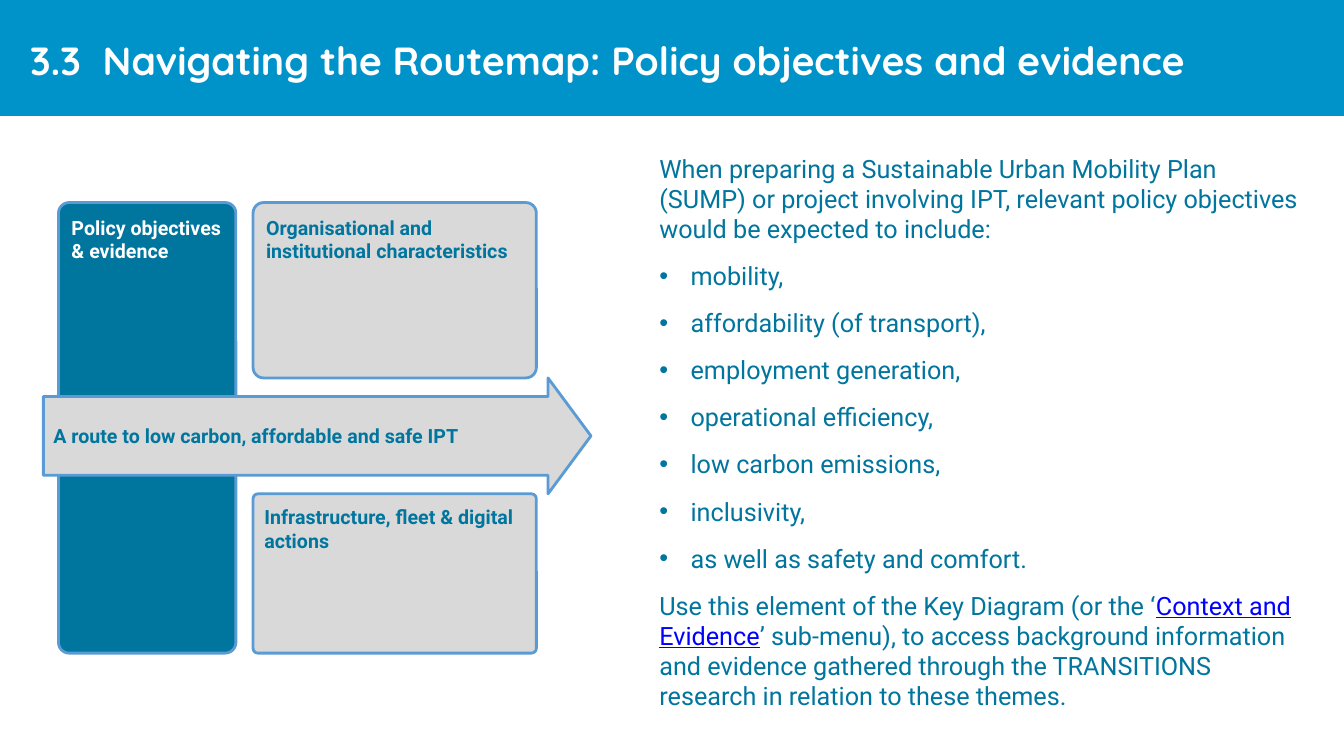
from lxml.etree import SubElement
from pptx import Presentation
from pptx.dml.color import RGBColor
from pptx.enum.shapes import MSO_SHAPE
from pptx.enum.text import MSO_ANCHOR, MSO_AUTO_SIZE, PP_ALIGN
from pptx.oxml.ns import qn
from pptx.util import Inches, Pt

TEAL, SKY, EDGE = "00759E", "0093CA", "5B9BD5"
GREY, WHITE, LINK = "D9D9D9", "FFFFFF", "0000FF"
GOALS = ["mobility,", "affordability (of transport),", "employment generation,",
         "operational efficiency,", "low carbon emissions,", "inclusivity,",
         "as well as safety and comfort."]


def hue(code):
    return RGBColor.from_string(code)


class Deck:
    """Holds the style and the current slide; places are percent of the slide."""

    def __init__(self, wide, high):
        self.file = Presentation()
        self.file.slide_width, self.file.slide_height = Inches(wide), Inches(high)
        self.slide = self.file.slides.add_slide(self.file.slide_layouts[1])
        self.font, self.head = "Roboto", "Quicksand"

    def area(self, left, top, width, height):
        wide, high = self.file.slide_width, self.file.slide_height
        return [int(part * full / 100) for part, full in
                zip((left, top, width, height), (wide, high, wide, high))]

    def place(self, shape, box):
        shape.left, shape.top, shape.width, shape.height = self.area(*box)

    def frame(self, shape, pads=(0.1, 0.1, 0.1, 0.1), anchor=MSO_ANCHOR.TOP):
        text = shape.text_frame
        text.word_wrap, text.auto_size = True, MSO_AUTO_SIZE.NONE
        text.vertical_anchor = anchor
        (text.margin_left, text.margin_top,
         text.margin_right, text.margin_bottom) = map(Inches, pads)
        return text

    def run(self, para, words, size, color, bold=False, line=False, font=None):
        run = para.add_run()
        run.text = words
        run.font.name, run.font.size = font or self.font, Pt(size)
        run.font.bold, run.font.underline = bold, line
        run.font.color.rgb = hue(color)

    def shape(self, kind, box, fill, edge=None, bends=()):
        shape = self.slide.shapes.add_shape(kind, *self.area(*box))
        shape.shadow.inherit = False
        shape.fill.solid()
        shape.fill.fore_color.rgb = hue(fill)
        if edge:
            shape.line.color.rgb, shape.line.width = hue(edge), Pt(2)
        else:
            shape.line.fill.background()
        for spot, bend in enumerate(bends):
            shape.adjustments[spot] = bend
        return shape

    def label(self, shape, lines, color, anchor=MSO_ANCHOR.TOP):
        text = self.frame(shape, anchor=anchor)
        for spot, words in enumerate(lines):
            para = text.add_paragraph() if spot else text.paragraphs[0]
            para.alignment = PP_ALIGN.LEFT
            self.run(para, words, 14, color, bold=True)

    def card(self, box, lines, bend, fill=GREY, color=TEAL):
        shape = self.shape(MSO_SHAPE.ROUNDED_RECTANGLE, box, fill, EDGE, [bend])
        self.label(shape, lines, color)

    def arrow(self, box, words):
        shape = self.shape(MSO_SHAPE.RIGHT_ARROW, box, GREY, EDGE, (0.68, 0.37))
        self.label(shape, [words], TEAL, MSO_ANCHOR.MIDDLE)

    def title(self, band, box, words):
        back = self.shape(MSO_SHAPE.RECTANGLE, band, SKY)
        self.slide.shapes.element.insert(2, back.element)
        head = self.slide.shapes.title
        self.place(head, box)
        para = self.frame(head, (0, 0.08, 0.16, 0.08)).paragraphs[0]
        para.alignment = PP_ALIGN.LEFT
        self.run(para, words, 28, WHITE, bold=True, font=self.head)

    def body(self, box, items):
        hold = self.slide.placeholders[1]
        self.place(hold, box)
        hold.fill.solid()
        hold.fill.fore_color.rgb = hue(WHITE)
        tint = hold.element.spPr.find(qn("a:solidFill"))[0]
        SubElement(tint, qn("a:alpha"), val="76000")
        text = self.frame(hold)
        for spot, (mark, runs) in enumerate(items):
            para = text.add_paragraph() if spot else text.paragraphs[0]
            props = para._p.get_or_add_pPr()
            step = Inches(0.31) if mark else 0
            props.set("marL", str(step))
            props.set("indent", str(-step))
            if mark:
                SubElement(props, qn("a:buChar"), char="•")
            else:
                SubElement(props, qn("a:buNone"))
            para.alignment = PP_ALIGN.LEFT
            para.space_before, para.space_after = Pt(0), Pt(12)
            for words, link in runs:
                self.run(para, words, 18, LINK if link else TEAL, line=link)


def main():
    deck = Deck(13.33, 7.5)
    deck.title((0, 0, 100, 15.33), (2.25, 3.73, 97.75, 8.53),
               "3.3  Navigating the Routemap: Policy objectives and evidence")
    intro = ("When preparing a Sustainable Urban Mobility Plan (SUMP) or project "
             "involving IPT, relevant policy objectives would be expected to include:")
    close = [("Use this element of the Key Diagram (or the ‘", False),
             ("Context and Evidence", True),
             ("’ sub-menu), to access background information and evidence gathered "
              "through the TRANSITIONS research in relation to these themes.", False)]
    goals = [(True, [(goal, False)]) for goal in GOALS]
    deck.body((48.31, 18.93, 49.36, 77.07),
              [(False, [(intro, False)]), *goals, (False, close)])
    deck.card((4.35, 26.8, 13.2, 59.6), ["Policy objectives & evidence"],
              0.06, TEAL, WHITE)
    deck.arrow((3.23, 50, 40.74, 15.33),
               "A route to low carbon, affordable and safe IPT")
    deck.card((18.83, 26.8, 21.08, 23.2),
              ["Organisational and", "institutional characteristics"], 0.06)
    deck.card((18.83, 65.33, 21.08, 21.07),
              ["Infrastructure, fleet & digital actions"], 0.03)
    deck.file.save("out.pptx")


if __name__ == "__main__":
    main()
